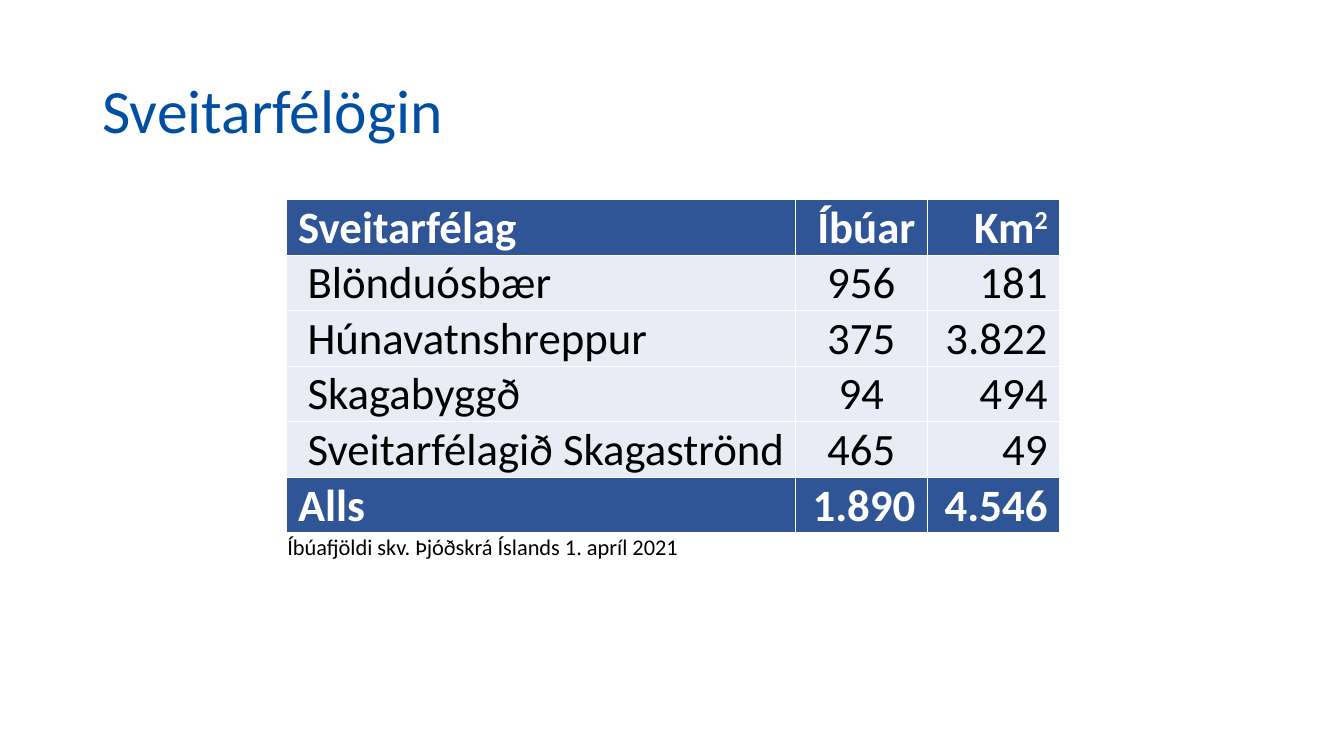
"""Build a slide with a table of municipalities, their population and area."""
from dataclasses import dataclass

from lxml.etree import SubElement
from pptx import Presentation
from pptx.dml.color import RGBColor
from pptx.enum.text import MSO_ANCHOR, PP_ALIGN
from pptx.oxml.ns import qn
from pptx.util import Cm, Pt

TITLE = "Sveitarfélögin"
HEADER = ("Sveitarfélag", "Íbúar", "Km")
HEADER_POWER = "2"
MUNICIPALITIES = [
    ("Blönduósbær", "956", "181"),
    ("Húnavatnshreppur", "375", "3.822"),
    ("Skagabyggð", "94", "494"),
    ("Sveitarfélagið Skagaströnd", "465", "49"),
]
TOTAL = ("Alls", "1.890", "4.546")
NOTE = "Íbúafjöldi skv. Þjóðskrá Íslands 1. apríl 2021"


@dataclass(frozen=True)
class Theme:
    font: str = "Calibri"
    title: str = "004FA3"
    band: str = "2F5597"
    body: str = "E9EBF5"
    light: str = "FFFFFF"
    dark: str = "000000"
    title_size: int = 44
    table_size: int = 32
    note_size: int = 16


THEME = Theme()
TABLE_LEFT, TABLE_TOP = 7.21, 5.03
COL_WIDTHS = (12.83, 3.33, 3.33)
ROW_HEIGHT, NOTE_HEIGHT = 1.4, 0.7
INSET, SIDE_INSET, NAME_INDENT = 0.03, 0.3, 0.54


def style(font, size, color, bold=False):
    font.name, font.size, font.bold = THEME.font, Pt(size), bold
    font.color.rgb = RGBColor.from_string(color)


def add_borders(cell):
    tcPr = cell._tc.get_or_add_tcPr()
    for i, side in enumerate(("lnL", "lnR", "lnT", "lnB")):
        ln = SubElement(tcPr, qn(f"a:{side}"), w=str(Pt(1)))
        fill = SubElement(ln, qn("a:solidFill"))
        SubElement(fill, qn("a:srgbClr"), val=THEME.light)
        tcPr.insert(i, ln)


def fill_cell(cell, text, size, color, fill=None, bold=False,
              align=PP_ALIGN.LEFT, left=INSET, right=INSET):
    cell.margin_left, cell.margin_right = Cm(left), Cm(right)
    cell.margin_top, cell.margin_bottom = Cm(INSET), 0
    cell.vertical_anchor = MSO_ANCHOR.BOTTOM
    if fill:
        cell.fill.solid()
        cell.fill.fore_color.rgb = RGBColor.from_string(fill)
    else:
        cell.fill.background()
    add_borders(cell)
    p = cell.text_frame.paragraphs[0]
    p.text, p.alignment = text, align
    style(p.font, size, color, bold)
    for r in p.runs:
        style(r.font, size, color, bold)
    return p


def add_title(s):
    sp = s.shapes.add_textbox(Cm(2.33), Cm(1.01), Cm(29.21), Cm(3.68))
    tf = sp.text_frame
    tf.word_wrap = True
    tf.vertical_anchor = MSO_ANCHOR.MIDDLE
    p = tf.paragraphs[0]
    p.text, p.line_spacing = TITLE, 0.9
    style(p.runs[0].font, THEME.title_size, THEME.title)


def add_municipality_table(s):
    rows = [HEADER, *MUNICIPALITIES, TOTAL]
    note_row = len(rows)
    height = ROW_HEIGHT * note_row + NOTE_HEIGHT
    table = s.shapes.add_table(note_row + 1, len(HEADER), Cm(TABLE_LEFT), Cm(TABLE_TOP),
                               Cm(sum(COL_WIDTHS)), Cm(height)).table
    table.first_row = table.horz_banding = False
    for col, width in zip(table.columns, COL_WIDTHS):
        col.width = Cm(width)
    for i, row in enumerate(table.rows):
        row.height = Cm(ROW_HEIGHT if i < note_row else NOTE_HEIGHT)

    for i, values in enumerate(rows):
        band = values in (HEADER, TOTAL)
        color, fill = (THEME.light, THEME.band) if band else (THEME.dark, THEME.body)
        for j, value in enumerate(values):
            if j == 0:
                place = dict(left=SIDE_INSET if band else NAME_INDENT)
            elif j == 1 and not band:
                place = dict(align=PP_ALIGN.CENTER)
            else:
                place = dict(align=PP_ALIGN.RIGHT, right=SIDE_INSET)
            p = fill_cell(table.cell(i, j), value, THEME.table_size, color, fill, band, **place)
            if values is HEADER and j == len(HEADER) - 1:
                r = p.add_run()
                r.text = HEADER_POWER
                style(r.font, THEME.table_size, color, band)
                r._r.get_or_add_rPr().set("baseline", "30000")

    table.cell(note_row, 0).merge(table.cell(note_row, 1))
    for j, text in ((0, NOTE), (2, "")):
        fill_cell(table.cell(note_row, j), text, THEME.note_size, THEME.dark)


def main():
    prs = Presentation()
    prs.slide_width, prs.slide_height = Cm(33.87), Cm(19.05)
    s = prs.slides.add_slide(prs.slide_layouts[6])
    add_title(s)
    add_municipality_table(s)
    prs.save("out.pptx")


if __name__ == "__main__":
    main()
